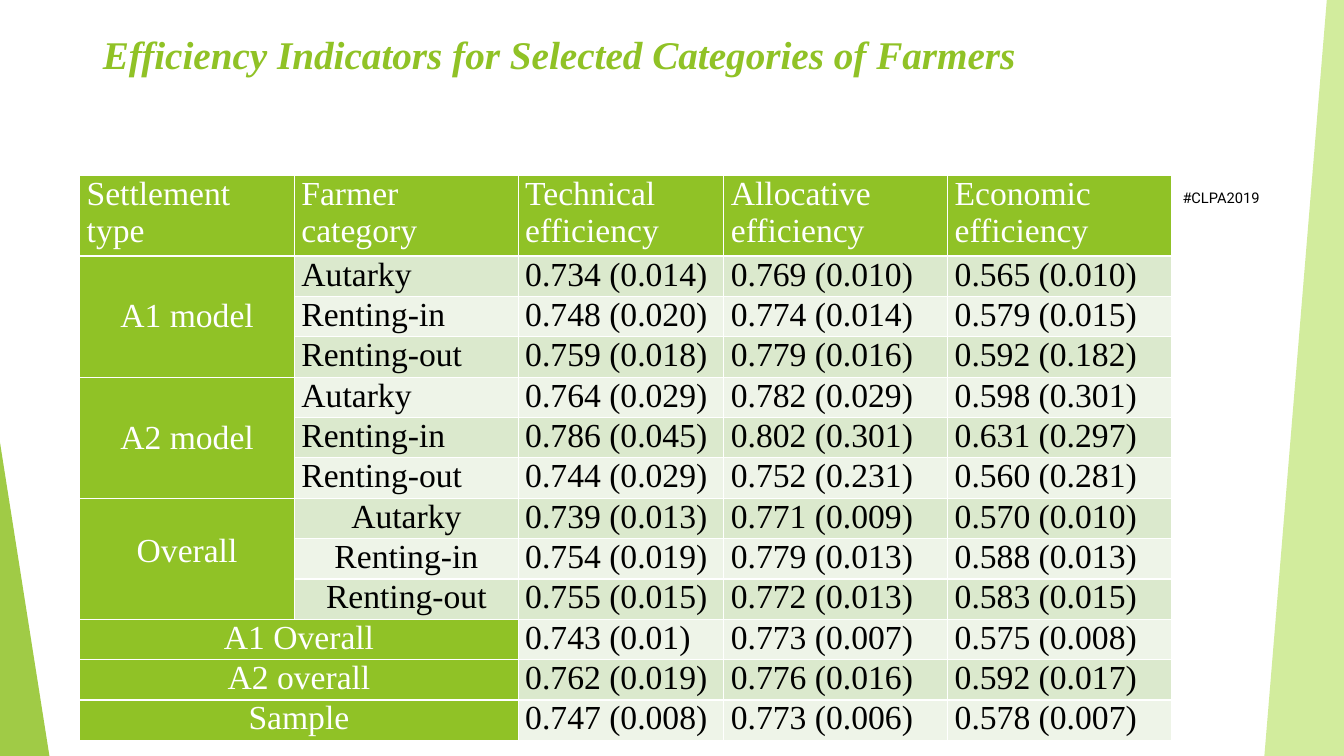
import pptx
import pptx.util
import pptx.dml.color
import pptx.enum.shapes
import pptx.enum.text
import pptx.oxml
import pptx.oxml.ns
from lxml import etree

Inches = pptx.util.Inches
Pt = pptx.util.Pt
Align = pptx.enum.text.PP_ALIGN
Anchor = pptx.enum.text.MSO_ANCHOR

COLORS = {
    "green": "90C226",
    "lime": "C0E474",
    "band_dark": "DBE9CD",
    "band_light": "EEF4E8",
    "white": "FFFFFF",
    "black": "000000",
}
HEADINGS = ["Settlement type", "Farmer category", "Technical efficiency",
            "Allocative efficiency", "Economic efficiency"]
CATEGORIES = ["Autarky", "Renting-in", "Renting-out"]
SETTLEMENTS = ["A1 model", "A2 model", "Overall"]
TOTALS = ["A1 Overall", "A2 overall", "Sample"]
SCORES = [
    ["0.734 (0.014)", "0.769 (0.010)", "0.565 (0.010)"],
    ["0.748 (0.020)", "0.774 (0.014)", "0.579 (0.015)"],
    ["0.759 (0.018)", "0.779 (0.016)", "0.592 (0.182)"],
    ["0.764 (0.029)", "0.782 (0.029)", "0.598 (0.301)"],
    ["0.786 (0.045)", "0.802 (0.301)", "0.631 (0.297)"],
    ["0.744 (0.029)", "0.752 (0.231)", "0.560 (0.281)"],
    ["0.739 (0.013)", "0.771 (0.009)", "0.570 (0.010)"],
    ["0.754 (0.019)", "0.779 (0.013)", "0.588 (0.013)"],
    ["0.755 (0.015)", "0.772 (0.013)", "0.583 (0.015)"],
    ["0.743 (0.01)", "0.773 (0.007)", "0.575 (0.008)"],
    ["0.762 (0.019)", "0.776 (0.016)", "0.592 (0.017)"],
    ["0.747 (0.008)", "0.773 (0.006)", "0.578 (0.007)"],
]
COLUMN_WIDTHS = [2.13, 2.22, 2.04, 2.22, 2.22]
ROW_HEIGHTS = [0.77] + [0.4, 0.4, 0.39] * len(TOTALS + [CATEGORIES])


class SlideBuilder:
    serif = "Times New Roman"
    sans = "Roboto"

    def __init__(self, slide):
        self.slide = slide

    def color(self, name):
        return pptx.dml.color.RGBColor.from_string(COLORS[name])

    def format_text(self, paragraph, font, size, color, bold=False, italic=False):
        for run in paragraph.runs:
            run.font.name = font
            run.font.size = Pt(size)
            run.font.color.rgb = self.color(color)
            run.font.bold = bold
            run.font.italic = italic

    def paint(self, shape, color, opacity):
        shape.shadow.inherit = False
        shape.line.fill.background()
        shape.fill.solid()
        shape.fill.fore_color.rgb = self.color(color)
        srgb = shape.fill._xPr.find(".//" + pptx.oxml.ns.qn("a:srgbClr"))
        etree.SubElement(srgb, pptx.oxml.ns.qn("a:alpha"), val=str(opacity * 1000))

    def polygon(self, points, color, opacity):
        corners = [(Inches(x), Inches(y)) for x, y in points]
        outline = self.slide.shapes.build_freeform(*corners[0])
        outline.add_line_segments(corners[1:], close=True)
        self.paint(outline.convert_to_shape(), color, opacity)

    def triangle(self, left, top, width, height, color, opacity):
        wedge = self.slide.shapes.add_shape(
            pptx.enum.shapes.MSO_SHAPE.ISOSCELES_TRIANGLE,
            Inches(left), Inches(top), Inches(width), Inches(height))
        wedge.adjustments[0] = 0
        self.paint(wedge, color, opacity)

    def title(self, text, left, top, width, height):
        heading = self.slide.shapes.title
        heading.left, heading.top = Inches(left), Inches(top)
        heading.width, heading.height = Inches(width), Inches(height)
        frame = heading.text_frame
        frame.text = text
        frame.word_wrap = True
        frame.vertical_anchor = Anchor.TOP
        frame.paragraphs[0].alignment = Align.LEFT
        self.format_text(frame.paragraphs[0], self.serif, 28, "green", True, True)

    def label(self, text, left, top, width, height):
        box = self.slide.shapes.add_textbox(
            Inches(left), Inches(top), Inches(width), Inches(height))
        box.text_frame.text = text
        box.text_frame.word_wrap = True
        self.format_text(box.text_frame.paragraphs[0], self.sans, 10.5, "black")

    def table(self, left, top, widths, heights):
        grid = self.slide.shapes.add_table(
            len(heights), len(widths), Inches(left), Inches(top),
            Inches(sum(widths)), Inches(sum(heights))).table
        for column, width in zip(grid.columns, widths):
            column.width = Inches(width)
        for row, height in zip(grid.rows, heights):
            row.height = Inches(height)
        for cell in grid.iter_cells():
            self.borders(cell)
        return grid

    def borders(self, cell):
        properties = cell._tc.get_or_add_tcPr()
        for side in "LRTB":
            properties.append(pptx.oxml.parse_xml(
                f'<a:ln{side} {pptx.oxml.ns.nsdecls("a")} w="{Pt(1)}"><a:solidFill>'
                f'<a:srgbClr val="{COLORS["white"]}"/></a:solidFill></a:ln{side}>'))

    def cell(self, cell, text, fill, color="black", align=Align.LEFT, anchor=Anchor.TOP):
        cell.text_frame.text = text
        cell.vertical_anchor = anchor
        cell.margin_left = cell.margin_right = Inches(0.07)
        cell.margin_top = cell.margin_bottom = 0
        cell.fill.solid()
        cell.fill.fore_color.rgb = self.color(fill)
        paragraph = cell.text_frame.paragraphs[0]
        paragraph.alignment = align
        paragraph.line_spacing = 1.0
        self.format_text(paragraph, self.serif, 24, color)


def fill_efficiency_table(builder, grid):
    for column, heading in enumerate(HEADINGS):
        builder.cell(grid.cell(0, column), heading, "green", "white")

    for row, scores in enumerate(SCORES, start=1):
        band = "band_dark" if row % 2 else "band_light"
        for column, score in enumerate(scores, start=2):
            builder.cell(grid.cell(row, column), score, band)
        group, member = divmod(row - 1, len(CATEGORIES))
        if group < len(SETTLEMENTS):
            align = Align.CENTER if SETTLEMENTS[group] == "Overall" else Align.LEFT
            builder.cell(grid.cell(row, 1), CATEGORIES[member], band, align=align)
        else:
            total = grid.cell(row, 0)
            total.merge(grid.cell(row, 1))
            builder.cell(total, TOTALS[member], "green", "white", Align.CENTER)

    for group, settlement in enumerate(SETTLEMENTS):
        first = 1 + group * len(CATEGORIES)
        settlement_cell = grid.cell(first, 0)
        settlement_cell.merge(grid.cell(first + len(CATEGORIES) - 1, 0))
        builder.cell(settlement_cell, settlement, "green", "white",
                     Align.CENTER, Anchor.MIDDLE)
    settlement_cell.vertical_anchor = Anchor.BOTTOM
    settlement_cell.margin_bottom = Inches(0.49)


def main():
    deck = pptx.Presentation()
    deck.slide_width, deck.slide_height = Inches(13.33), Inches(7.5)
    builder = SlideBuilder(deck.slides.add_slide(deck.slide_layouts[5]))
    builder.polygon([(13.16, -0.01), (13.33, -0.01), (13.33, 7.5), (12.54, 7.5)], "lime", 70)
    builder.triangle(0, 4.39, 0.49, 3.11, "green", 85)
    builder.label("#CLPA2019", 11.63, 1.82, 1.31, 0.28)
    builder.title("Efficiency Indicators for Selected Categories of Farmers",
                  0.92, 0.25, 11.5, 0.67)
    fill_efficiency_table(builder, builder.table(0.79, 1.74, COLUMN_WIDTHS, ROW_HEIGHTS))
    deck.save("out.pptx")


if __name__ == "__main__":
    main()
